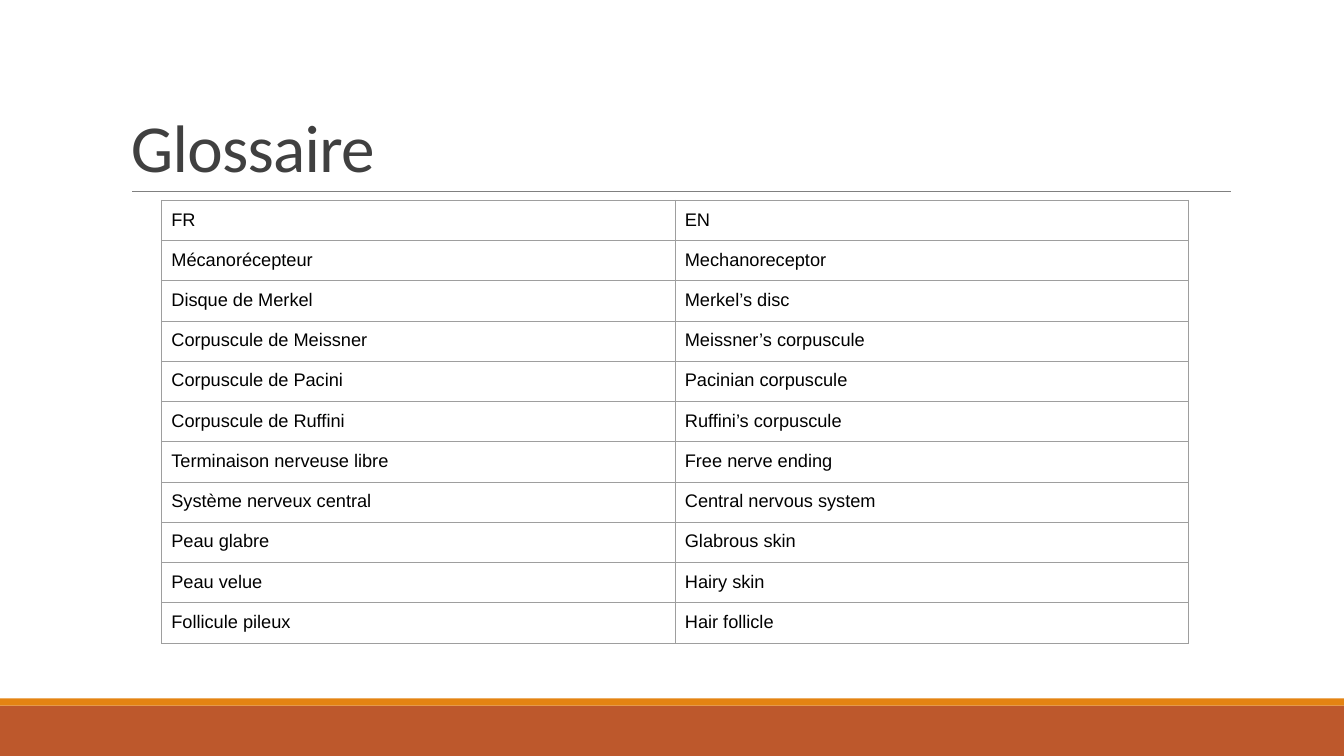
from lxml import etree
from pptx import Presentation
from pptx import util as u
from pptx.dml.color import RGBColor
from pptx.enum import shapes, text
from pptx.oxml import ns

COLOURS = {
    "footer": "BD582C",
    "footer_edge": "E48312",
    "rule": "808080",
    "title": "404040",
    "grid": "9E9E9E",
    "term": "000000",
}

SLIDE_WIDTH, SLIDE_HEIGHT = u.Cm(33.87), u.Cm(19.05)

GLOSSARY = [
    ("FR", "EN"),
    ("Mécanorécepteur", "Mechanoreceptor"),
    ("Disque de Merkel", "Merkel’s disc"),
    ("Corpuscule de Meissner", "Meissner’s corpuscule"),
    ("Corpuscule de Pacini", "Pacinian corpuscule"),
    ("Corpuscule de Ruffini", "Ruffini’s corpuscule"),
    ("Terminaison nerveuse libre", "Free nerve ending"),
    ("Système nerveux central", "Central nervous system"),
    ("Peau glabre", "Glabrous skin"),
    ("Peau velue", "Hairy skin"),
    ("Follicule pileux", "Hair follicle"),
]

CELL_FORMAT = {
    "margin_left": u.Cm(0.24),
    "margin_right": u.Cm(0.24),
    "margin_top": u.Cm(0.23),
    "margin_bottom": u.Cm(0.23),
    "vertical_anchor": text.MSO_ANCHOR.TOP,
}
TITLE_FRAME_FORMAT = {
    "word_wrap": True,
    "vertical_anchor": text.MSO_ANCHOR.BOTTOM,
}
TITLE_FONT = {"name": "Calibri", "size": u.Pt(48)}
TERM_FONT = {"name": "Arial", "size": u.Pt(13), "bold": False}


def colour(name):
    return RGBColor.from_string(COLOURS[name])


def apply(target, values):
    for attribute, value in values.items():
        setattr(target, attribute, value)


def write(paragraph, words, font_format, colour_name):
    run = paragraph.add_run()
    run.text = words
    apply(run.font, font_format)
    run.font.color.rgb = colour(colour_name)
    return run


def add_band(slide, top, height, colour_name):
    """Add a full-width stripe at the foot of the slide."""
    band = slide.shapes.add_shape(
        shapes.MSO_SHAPE.RECTANGLE, 0, top, SLIDE_WIDTH, height)
    band.shadow.inherit = False
    band.fill.solid()
    band.fill.fore_color.rgb = colour(colour_name)
    band.line.fill.background()


def add_rule(slide, left, right, top):
    rule = slide.shapes.add_connector(
        shapes.MSO_CONNECTOR.STRAIGHT, left, top, right, top)
    rule.line.color.rgb = colour("rule")
    rule.line.width = u.Pt(0.5)
    etree.SubElement(rule._element.spPr, ns.qn("a:effectLst"))


def add_title(slide, words):
    title = slide.shapes.add_textbox(
        u.Cm(3.05), u.Cm(0.79), u.Cm(27.94), u.Cm(4.04))
    apply(title.text_frame, TITLE_FRAME_FORMAT)
    paragraph = title.text_frame.paragraphs[0]
    paragraph.line_spacing = 0.85
    run = write(paragraph, words, TITLE_FONT, "title")
    run.font._element.set("spc", "-50")


def add_borders(cell):
    properties = cell._tc.get_or_add_tcPr()
    for side in ("lnL", "lnR", "lnT", "lnB"):
        border = etree.SubElement(
            properties, ns.qn(f"a:{side}"), w=str(u.Pt(0.75)))
        fill = etree.SubElement(border, ns.qn("a:solidFill"))
        etree.SubElement(fill, ns.qn("a:srgbClr"), val=COLOURS["grid"])


def add_glossary(slide, entries):
    glossary = slide.shapes.add_table(
        len(entries), len(entries[0]),
        u.Cm(4.08), u.Cm(5.05), u.Cm(25.88), u.Cm(11.16)).table
    apply(glossary, {"first_row": False, "horz_banding": False})
    for row, terms in zip(glossary.rows, entries):
        for cell, term in zip(row.cells, terms):
            apply(cell, CELL_FORMAT)
            add_borders(cell)
            cell.fill.background()
            write(cell.text_frame.paragraphs[0], term, TERM_FONT, "term")


def main():
    deck = Presentation()
    apply(deck, {"slide_width": SLIDE_WIDTH, "slide_height": SLIDE_HEIGHT})
    slide = deck.slides.add_slide(deck.slide_layouts[6])
    add_band(slide, u.Cm(17.78), u.Cm(1.27), "footer")
    add_band(slide, u.Cm(17.6), u.Cm(0.18), "footer_edge")
    add_rule(slide, u.Cm(3.33), u.Cm(31.01), u.Cm(4.83))
    add_title(slide, "Glossaire")
    add_glossary(slide, GLOSSARY)
    deck.save("out.pptx")


if __name__ == "__main__":
    main()
